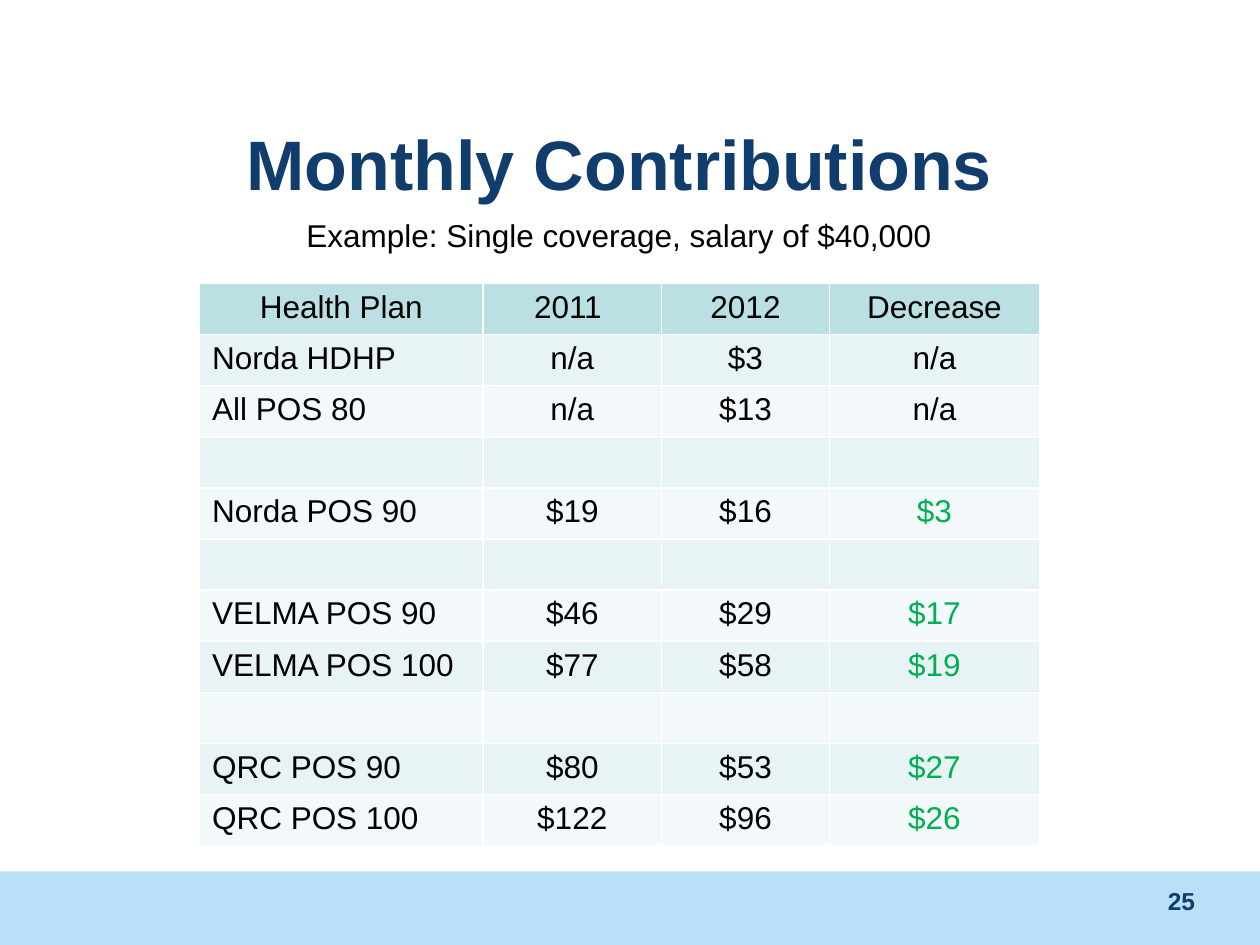
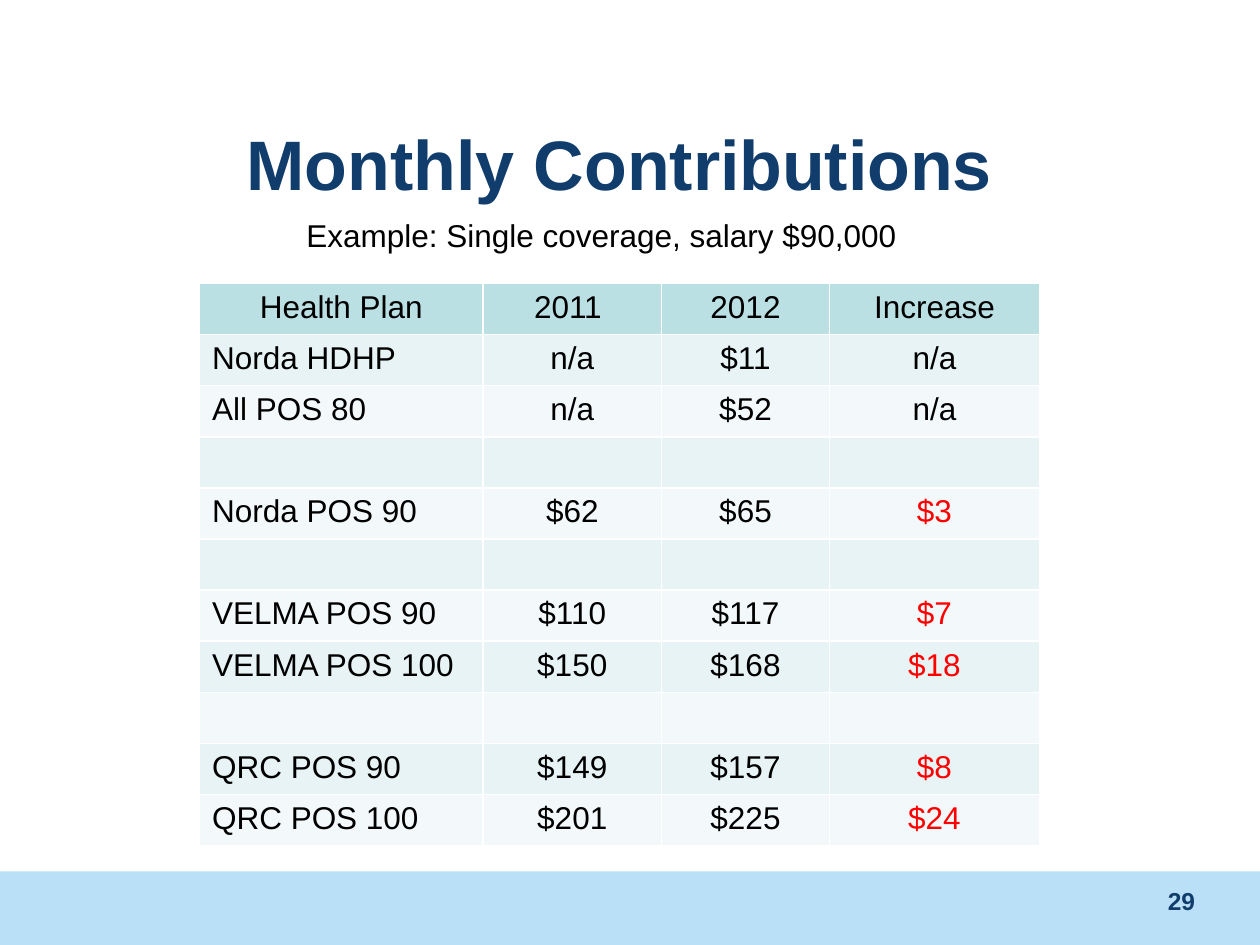
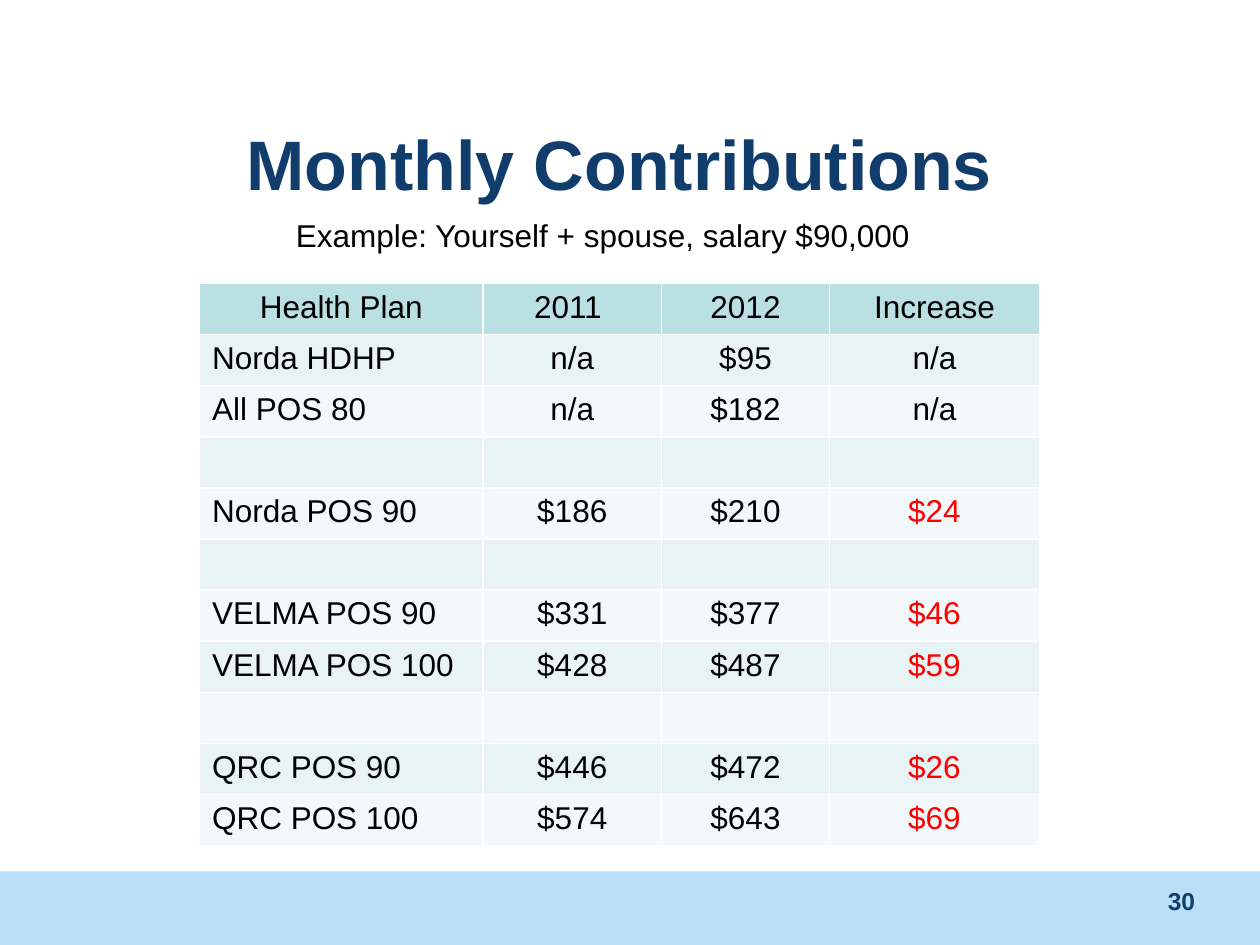
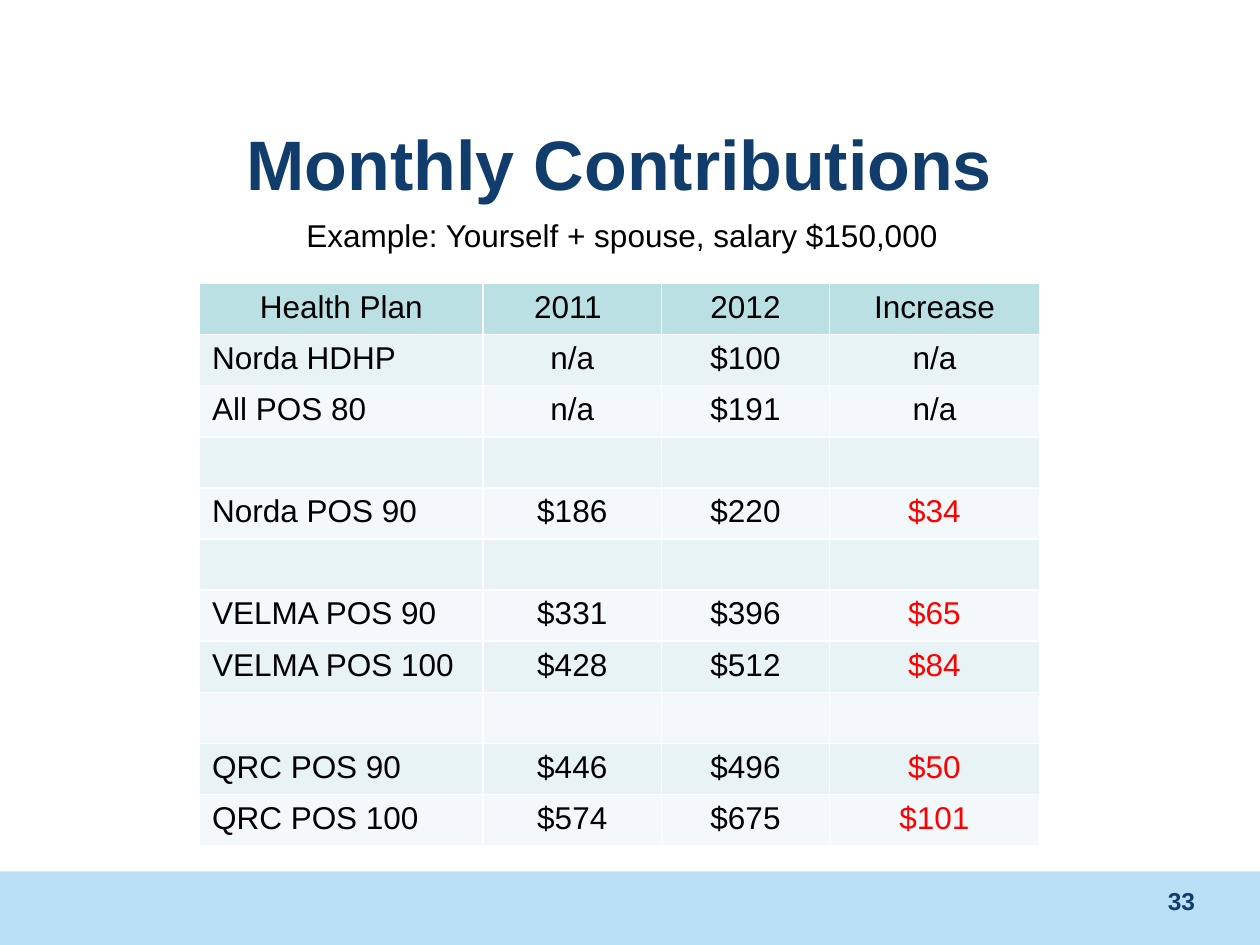
from dataclasses import dataclass

from lxml.etree import SubElement
from pptx import Presentation
from pptx.dml.color import RGBColor
from pptx.enum.shapes import MSO_SHAPE
from pptx.enum.text import MSO_ANCHOR, PP_ALIGN
from pptx.oxml.ns import qn
from pptx.util import Inches, Pt


@dataclass(frozen=True)
class Theme:
    font: str = "Arial"
    title_size: int = 40
    body_size: int = 18
    number_size: int = 14
    border_width: int = 1
    navy: str = "113D6D"
    black: str = "000000"
    white: str = "FFFFFF"
    band: str = "B9E0F7"
    header: str = "BBE0E3"
    stripes: tuple = ("E7F3F4", "F3F9FA")
    decrease: str = "00B050"
    increase: str = "FF0000"


THEME = Theme()


def write(text_frame, text, size=THEME.body_size, color=THEME.black, bold=False,
          align=PP_ALIGN.LEFT):
    paragraph = text_frame.paragraphs[0]
    paragraph.alignment = align
    run = paragraph.add_run()
    run.text = text
    run.font.name = THEME.font
    run.font.size = Pt(size)
    run.font.bold = bold
    run.font.color.rgb = RGBColor.from_string(color)


def style_cell(cell, fill):
    """Draw white borders on all four sides and fill the cell."""
    properties = cell._tc.get_or_add_tcPr()
    for side in "LRTB":
        line = SubElement(properties, qn(f"a:ln{side}"), w=str(Pt(THEME.border_width)))
        SubElement(SubElement(line, qn("a:solidFill")), qn("a:srgbClr"), val=THEME.white)
    cell.fill.solid()
    cell.fill.fore_color.rgb = RGBColor.from_string(fill)


# None leaves an empty row between the groups of plans.
PLANS = ["Norda HDHP", "All POS 80", None, "Norda POS 90", None,
         "VELMA POS 90", "VELMA POS 100", None, "QRC POS 90", "QRC POS 100"]

# Slide number, example, its left edge and width in columns, change, 2011 and 2012 amounts.
EXAMPLES = [
    (25, "Example: Single coverage, salary of $40,000", 28, 62, "Decrease",
     [None, None, 19, 46, 77, 80, 122], [3, 13, 16, 29, 58, 53, 96]),
    (29, "Example: Single coverage, salary $90,000", 28, 62, "Increase",
     [None, None, 62, 110, 150, 149, 201], [11, 52, 65, 117, 168, 157, 225]),
    (30, "Example: Yourself + spouse, salary $90,000", 27, 63, "Increase",
     [None, None, 186, 331, 428, 446, 574], [95, 182, 210, 377, 487, 472, 643]),
    (33, "Example: Yourself + spouse, salary $150,000", 28, 66, "Increase",
     [None, None, 186, 331, 428, 446, 574], [100, 191, 220, 396, 512, 496, 675]),
]
COLUMN_WIDTHS = (27, 17, 16, 20)

presentation = Presentation()
presentation.slide_width = Inches(10)
presentation.slide_height = Inches(7.5)
title_only = presentation.slide_layouts[5]
unit = presentation.slide_width // 120  # the grid has 120 columns and 90 rows

for number, caption, caption_left, caption_width, change, before, after in EXAMPLES:
    slide = presentation.slides.add_slide(title_only)

    band = slide.shapes.add_shape(
        MSO_SHAPE.RECTANGLE, 0, 83 * unit, 120 * unit, 7 * unit)
    band.shadow.inherit = False
    band.fill.solid()
    band.fill.fore_color.rgb = RGBColor.from_string(THEME.band)
    band.line.fill.background()
    slide.shapes.element.insert(2, band.element)  # behind everything else

    title = slide.shapes.title
    title.left, title.top, title.width, title.height = (
        5 * unit, 8 * unit, 108 * unit, 15 * unit)
    title.text_frame.vertical_anchor = MSO_ANCHOR.MIDDLE
    write(title.text_frame, "Monthly Contributions", size=THEME.title_size,
          color=THEME.navy, bold=True, align=PP_ALIGN.CENTER)

    number_box = slide.shapes.add_textbox(
        87 * unit, int(83.75 * unit), 28 * unit, int(6.2 * unit))
    number_box.text_frame.word_wrap = True
    write(number_box.text_frame, str(number), size=THEME.number_size,
          color=THEME.navy, bold=True, align=PP_ALIGN.RIGHT)

    rows = [("Health Plan", "2011 ", "2012", change)]
    amounts = zip(before, after)
    for plan in PLANS:
        if plan is None:
            rows.append(("", "", "", ""))
            continue
        old, new = next(amounts)
        if old is None:
            rows.append((plan, "n/a", f"${new}", "n/a"))
        else:
            rows.append((plan, f"${old}", f"${new}", f"${abs(new - old)}"))

    table = slide.shapes.add_table(
        len(rows), len(COLUMN_WIDTHS), 19 * unit, 27 * unit,
        sum(COLUMN_WIDTHS) * unit, int(53.55 * unit)).table
    for column, width in zip(table.columns, COLUMN_WIDTHS):
        column.width = width * unit
    change_color = THEME.decrease if change == "Decrease" else THEME.increase
    for row_index, row in enumerate(rows):
        is_header = row_index == 0
        fill = THEME.header if is_header else THEME.stripes[(row_index - 1) % 2]
        for column_index, text in enumerate(row):
            cell = table.cell(row_index, column_index)
            style_cell(cell, fill)
            if text:
                is_change = column_index == 3 and text.startswith("$")
                is_plan = column_index == 0 and not is_header
                write(cell.text_frame, text,
                      color=change_color if is_change else THEME.black,
                      align=PP_ALIGN.LEFT if is_plan else PP_ALIGN.CENTER)

    caption_box = slide.shapes.add_textbox(
        caption_left * unit, 20 * unit, caption_width * unit, int(4.8 * unit))
    caption_box.text_frame.word_wrap = True
    write(caption_box.text_frame, caption)

presentation.save("out.pptx")
